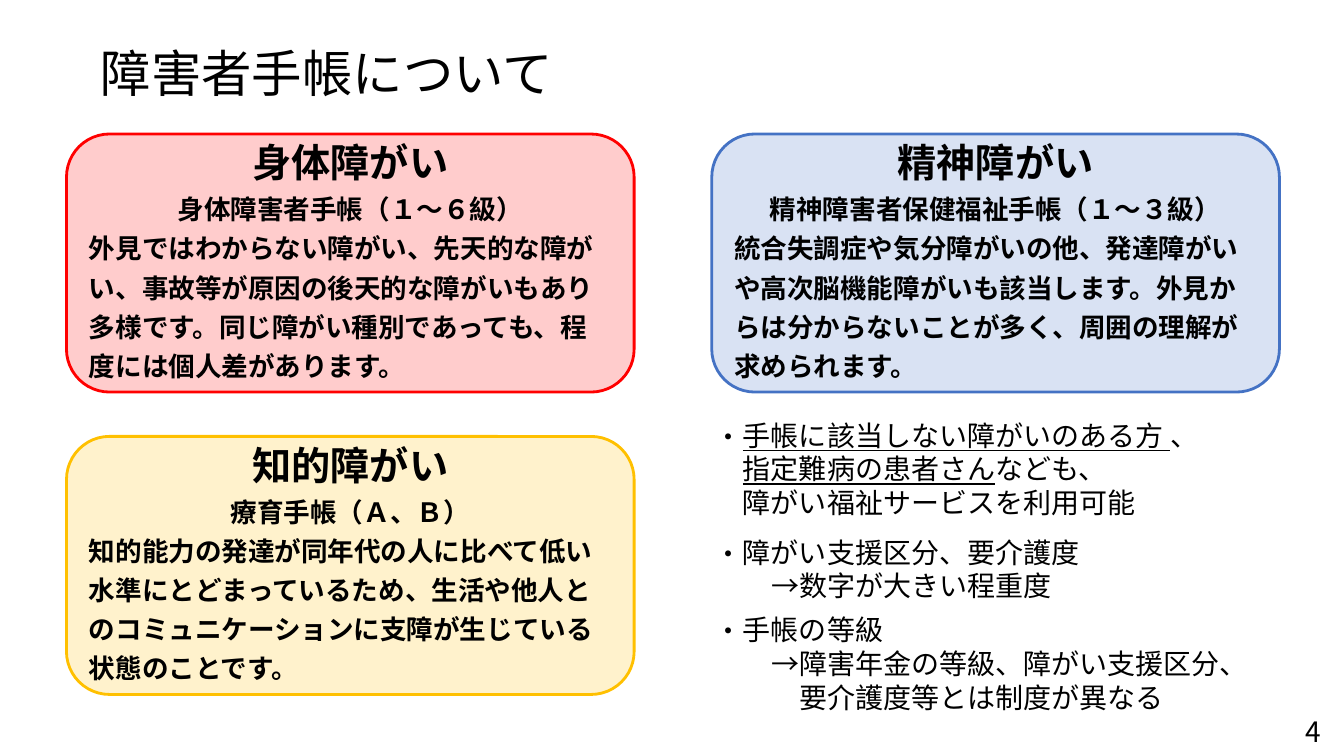
from pptx import Presentation
from pptx import util as u
from pptx.dml.color import RGBColor
from pptx.enum import shapes, text
from pptx.oxml.ns import qn
from lxml import etree

FONT = "Noto Sans CJK JP"
BLACK = RGBColor(0x00, 0x00, 0x00)
RED = RGBColor(0xFF, 0x00, 0x00)
AMBER = RGBColor(0xFF, 0xC0, 0x00)
BLUE = RGBColor(0x44, 0x72, 0xC4)

CARD_W, CARD_H = 5.63, 2.56
LEFT, RIGHT = 0.66, 7.06
TOP, BOTTOM = 1.33, 4.33
INDENT = 0.28

CARDS = [
    (LEFT, TOP, RED, "身体障がい", "身体障害者手帳（１～６級）",
     "外見ではわからない障がい、先天的な障がい、事故等が原因の後天的な障がいもあり多様です。"
     "同じ障がい種別であっても、程度には個人差があります。"),
    (LEFT, BOTTOM, AMBER, "知的障がい", "療育手帳（Ａ、Ｂ）",
     "知的能力の発達が同年代の人に比べて低い水準にとどまっているため、"
     "生活や他人とのコミュニケーションに支障が生じている状態のことです。"),
    (RIGHT, TOP, BLUE, "精神障がい", "精神障害者保健福祉手帳（１～３級）",
     "統合失調症や気分障がいの他、発達障がいや高次脳機能障がいも該当します。"
     "外見からは分からないことが多く、周囲の理解が求められます。"),
]

NOTES = [
    (4.1, 1.11, [
        (1, [("手帳に該当しない障がいのある方 ", True), ("、", False)]),
        (1, [("指定難病の患者さん", True), ("なども、", False)]),
        (1, [("障がい福祉サービスを利用可能", False)]),
    ]),
    (5.26, 0.77, [
        (1, [("障がい支援区分、要介護度", False)]),
        (2, [("→数字が大きい程重度", False)]),
    ]),
    (6.03, 1.11, [
        (1, [("手帳の等級", False)]),
        (2, [("→障害年金の等級、障がい支援区分、", False)]),
        (3, [("要介護度等とは制度が異なる", False)]),
    ]),
]


def add_run(p, words, size, **formats):
    """Add a run in the slide font with the given formats."""
    r = p.add_run()
    r.text = words
    for name, value in {"name": FONT, "size": u.Pt(size), **formats}.items():
        setattr(r.font, name, value)
    r.font.color.rgb = BLACK
    etree.SubElement(r.font._element, qn("a:ea"), typeface=FONT)


def paragraph(tf, i):
    """Return the first paragraph for index 0, otherwise a new one."""
    return tf.add_paragraph() if i else tf.paragraphs[0]


def add_text_box(s, x, y, w, h):
    """Add a wrapping text box and return its frame."""
    tf = s.shapes.add_textbox(*map(u.Inches, (x, y, w, h))).text_frame
    tf.word_wrap = True
    return tf


def add_title(s, x, y, w, h):
    """Place the slide title, centred vertically in its box."""
    tf = add_text_box(s, x, y, w, h)
    tf.vertical_anchor = text.MSO_ANCHOR.MIDDLE
    p = tf.paragraphs[0]
    p.line_spacing = 0.9
    add_run(p, "障害者手帳について", 36)


def add_card(s, x, y, w, h, color, heading, booklet, body):
    """Place a rounded, tinted card with heading, booklet name and body."""
    sp = s.shapes.add_shape(shapes.MSO_SHAPE.ROUNDED_RECTANGLE,
                            *map(u.Inches, (x, y, w, h)))
    sp.shadow.inherit = False
    sp.fill.solid()
    sp.fill.fore_color.rgb = color
    tint = sp._element.spPr.find(qn("a:solidFill"))[0]
    etree.SubElement(tint, qn("a:alpha"), val="20000")
    sp.line.color.rgb = color
    sp.line.width = u.Pt(2)
    tf = sp.text_frame
    frame = {"word_wrap": True, "vertical_anchor": text.MSO_ANCHOR.TOP,
             "margin_top": 0, "margin_bottom": 0}
    for name, value in frame.items():
        setattr(tf, name, value)
    center, left = text.PP_ALIGN.CENTER, text.PP_ALIGN.LEFT
    rows = [(heading, 28, center), (booklet, 19, center), (body, 19, left)]
    for i, (words, size, align) in enumerate(rows):
        p = paragraph(tf, i)
        p.alignment = align
        p.line_spacing = u.Pt(28)
        add_run(p, words, size, bold=True)


def add_note(s, x, y, w, h, lines):
    """Place a bulleted note whose later lines are indented by level."""
    tf = add_text_box(s, x, y, w, h)
    for i, (level, runs) in enumerate(lines):
        p = paragraph(tf, i)
        pPr = p._p.get_or_add_pPr()
        pPr.set("marL", str(u.Inches(INDENT * level)))
        pPr.set("indent", str(0 if i else -u.Inches(INDENT)))
        if i == 0:
            etree.SubElement(pPr, qn("a:buFont"), typeface=FONT)
            etree.SubElement(pPr, qn("a:buChar"), char="・")
        for words, underline in runs:
            add_run(p, words, 20, underline=underline)


def add_page_number(s, x, y, w, h):
    """Place the page number in the corner."""
    tf = add_text_box(s, x, y, w, h)
    add_run(tf.paragraphs[0], "4", 20)


def main():
    """Build and save the slide."""
    prs = Presentation()
    prs.slide_width, prs.slide_height = u.Inches(13.33), u.Inches(7.5)
    s = prs.slides.add_slide(prs.slide_layouts[6])
    add_title(s, 0.9, 0.19, 12.16, 1.14)
    for x, y, *content in CARDS:
        add_card(s, x, y, CARD_W, CARD_H, *content)
    for y, h, lines in NOTES:
        add_note(s, 6.99, y, 5.53, h, lines)
    add_page_number(s, 12.85, 7.04, 0.39, 0.44)
    prs.save("out.pptx")


if __name__ == "__main__":
    main()
